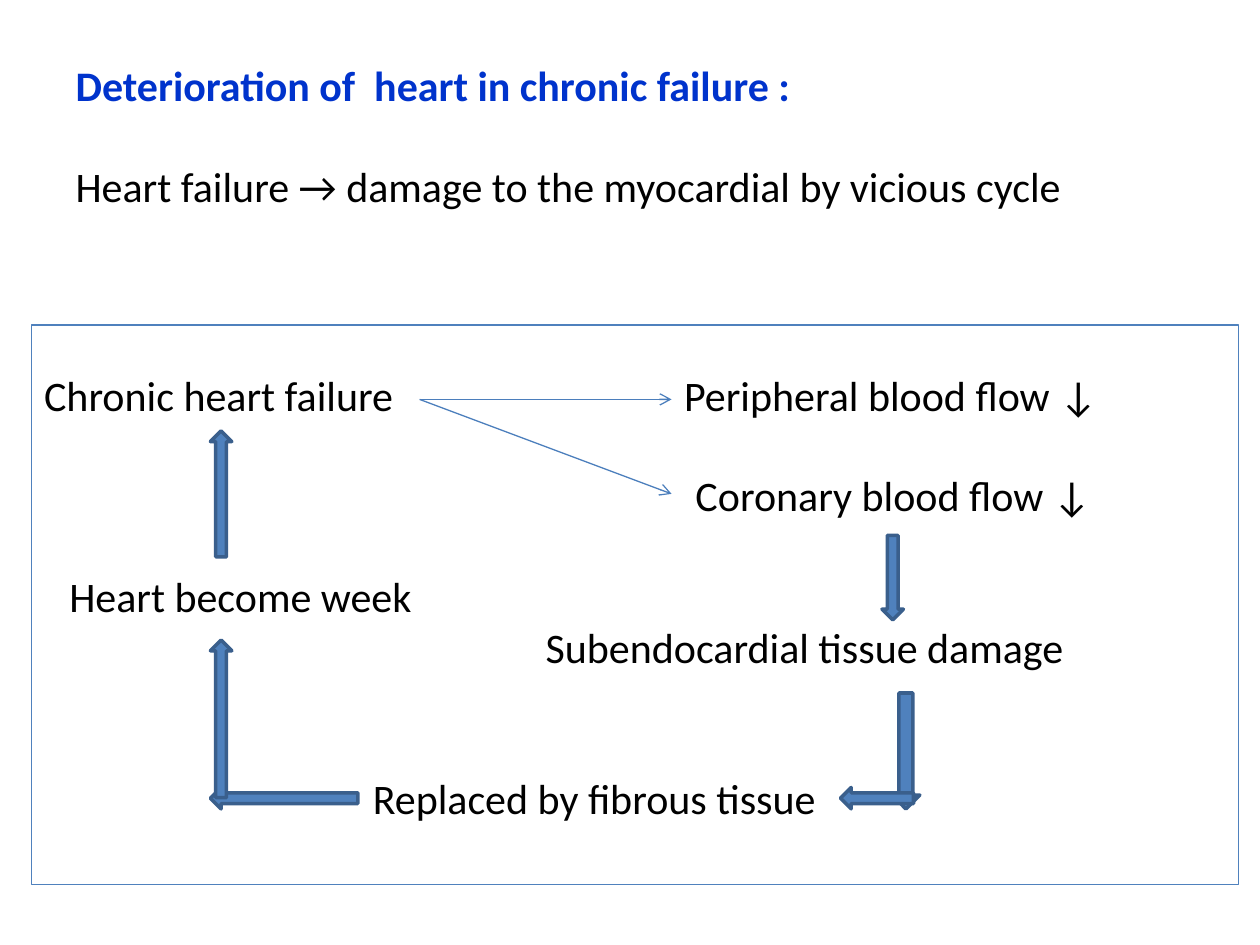
from lxml import etree
from pptx import Presentation
from pptx.dml.color import RGBColor
from pptx.enum.shapes import MSO_CONNECTOR, MSO_SHAPE
from pptx.enum.text import MSO_ANCHOR, MSO_AUTO_SIZE, PP_ALIGN
from pptx.oxml.ns import qn
from pptx.util import Inches, Pt

STRAIGHT = MSO_CONNECTOR.STRAIGHT
RECT = MSO_SHAPE.RECTANGLE
UP, DOWN, LEFT = MSO_SHAPE.UP_ARROW, MSO_SHAPE.DOWN_ARROW, MSO_SHAPE.LEFT_ARROW
COLORS = {"title": "0033CC", "text": "000000", "fill": "4F81BD",
          "edge": "3A5F8C", "link": "4B7EBC"}
FONT, SIZE = "Calibri", 24
ROW, TOP = 0.4, 2.93

# text, left, width, row in the panel
LABELS = [
    ("Chronic heart failure", 0.35, 3, 0),
    ("Peripheral blood flow ↓", 5.43, 3.8, 0),
    ("Coronary blood flow ↓", 5.52, 3.8, 2),
    ("Heart become week", 0.55, 3, 4),
    ("Subendocardial tissue damage", 4.33, 4.6, 5),
    ("Replaced by fibrous tissue", 2.96, 3.8, 8),
]
# shape, left, top, width, height
ARROWS = [
    (DOWN, 7, 4.25, 0.17, 0.67),
    (DOWN, 7.08, 5.5, 0.22, 0.92),
    (LEFT, 6.67, 6.25, 0.58, 0.17),
    (LEFT, 1.67, 6.25, 1.17, 0.17),
    (UP, 1.67, 5.08, 0.17, 1.25),
    (UP, 1.67, 3.42, 0.17, 1),
]


def color(name):
    return RGBColor.from_string(COLORS[name])


def write(shape, text, ink="text", bold=False):
    """Set one line of text, flush with the top left of the shape."""
    frame = shape.text_frame
    frame.text = text
    frame.word_wrap = True
    frame.auto_size = MSO_AUTO_SIZE.NONE
    frame.vertical_anchor = MSO_ANCHOR.TOP
    frame.margin_left = frame.margin_right = 0
    frame.margin_top = frame.margin_bottom = 0
    para = frame.paragraphs[0]
    para.alignment = PP_ALIGN.LEFT
    para.space_before = Pt(0)
    font = para.runs[0].font
    font.name, font.size, font.bold = FONT, Pt(SIZE), bold
    font.color.rgb = color(ink)
    return para


def place(shape, *box):
    shape.left, shape.top, shape.width, shape.height = map(Inches, box)


def add_heads(slide):
    title, body = slide.placeholders
    place(title, 0.6, 0.47, 8.97, 0.5)
    write(title, "Deterioration of  heart in chronic failure :", "title", True)
    place(body, 0.6, 0.47 + 2 * ROW, 8.97, 0.5)
    para = write(body, "Heart failure → damage to the myocardial by vicious cycle")
    props = para._p.get_or_add_pPr()
    props.set("marL", "0")
    props.set("indent", "0")
    etree.SubElement(props, qn("a:buNone"))


def add_panel(slide):
    panel = slide.shapes.add_shape(RECT, *map(Inches, (0.25, 2.58, 9.58, 4.44)))
    panel.shadow.inherit = False
    panel.fill.background()
    panel.line.color.rgb = color("fill")
    panel.line.width = Pt(0.75)


def add_label(slide, text, left, width, row):
    box = (left, TOP + row * ROW, width, ROW)
    write(slide.shapes.add_textbox(*map(Inches, box)), text)


def add_link(slide, *ends):
    """Draw a thin line with an open arrowhead at its far end."""
    link = slide.shapes.add_connector(STRAIGHT, *map(Inches, ends))
    link.line.color.rgb = color("link")
    link.line.width = Pt(0.75)
    etree.SubElement(link.line._get_or_add_ln(), qn("a:tailEnd"), type="arrow")
    etree.SubElement(link._element.spPr, qn("a:effectLst"))


def add_arrow(slide, kind, *box):
    arrow = slide.shapes.add_shape(kind, *map(Inches, box))
    arrow.shadow.inherit = False
    arrow.fill.solid()
    arrow.fill.fore_color.rgb = color("fill")
    arrow.line.color.rgb = color("edge")
    arrow.line.width = Pt(2)


def main():
    deck = Presentation()
    deck.slide_width, deck.slide_height = Inches(10), Inches(7.5)
    slide = deck.slides.add_slide(deck.slide_layouts[1])
    add_heads(slide)
    add_panel(slide)
    for label in LABELS:
        add_label(slide, *label)
    for end in (3.17, 3.92):
        add_link(slide, 3.33, 3.17, 5.33, end)
    for arrow in ARROWS:
        add_arrow(slide, *arrow)
    deck.save("out.pptx")


if __name__ == "__main__":
    main()
